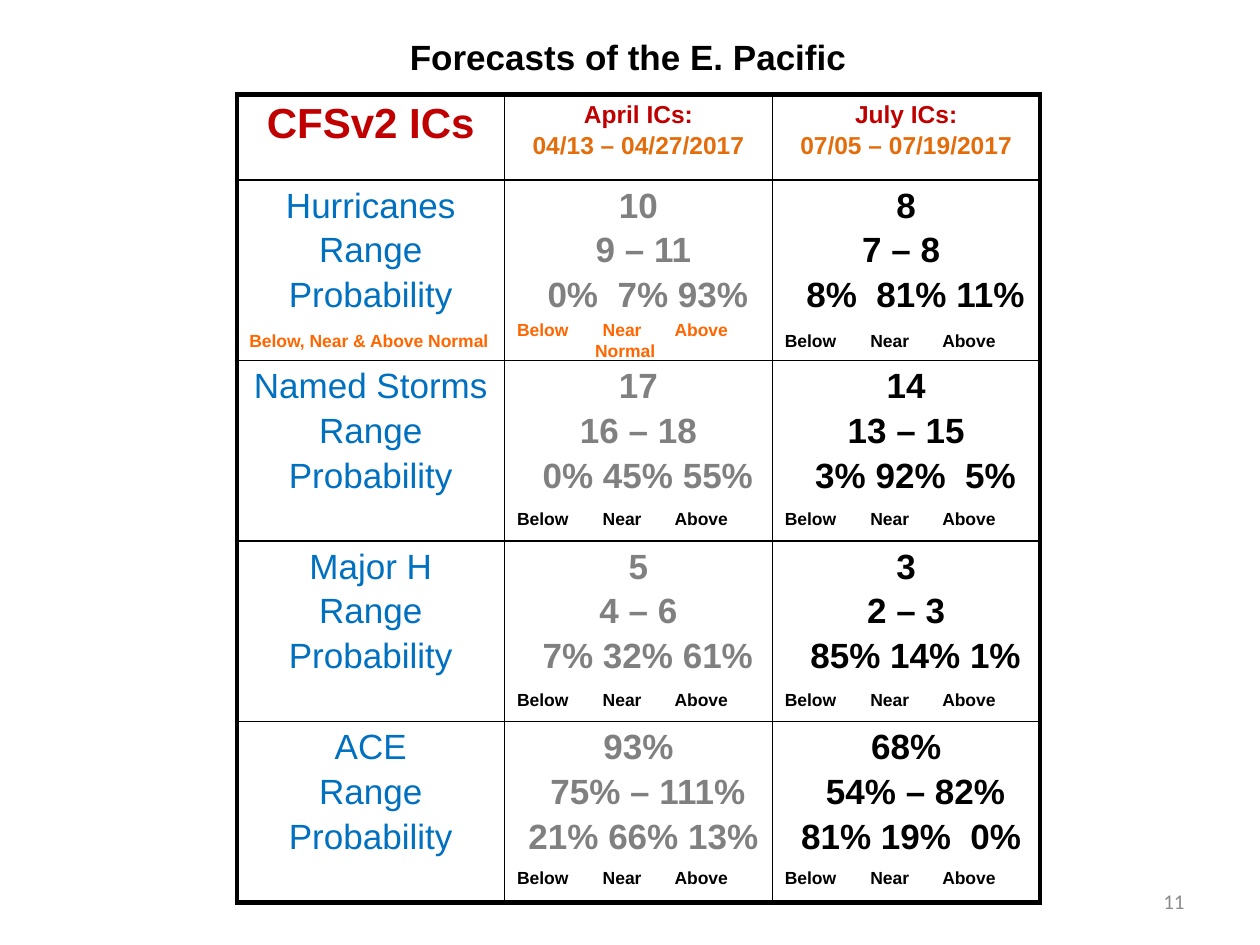
import pptx
import pptx.dml.color
import pptx.enum.text
import pptx.oxml.ns
import pptx.util
import lxml.etree

Inches = pptx.util.Inches
ALIGN = pptx.enum.text.PP_ALIGN
ANCHOR = pptx.enum.text.MSO_ANCHOR

# Grid of the forecast table, in inches
LEFT, TOP = 1.88, 0.75
COLUMN, HEADER_ROW, ROW = 2.125, 0.68, 1.433

RED, ORANGE, BRIGHT_ORANGE = "C00000", "E46C0A", "FF6600"
BLUE, GREY, BLACK = "0070C0", "808080", "000000"

# Measure, April lines, July lines; a line may carry left and right indents
FORECASTS = [
    ("Hurricanes",
     ["10", ("9 – 11", 0.08, 0), ("0%  7% 93%", 0.15, 0)],
     ["8", ("7 – 8", 0, 0.08), ("8%  81% 11%", 0.15, 0)]),
    ("Named Storms",
     ["17", "16 – 18", ("0% 45% 55%", 0.15, 0)],
     ["14", "13 – 15", ("3% 92%  5%", 0.15, 0)]),
    ("Major H",
     ["5", "4 – 6", ("7% 32% 61%", 0.15, 0)],
     ["3", "2 – 3", ("85% 14% 1%", 0.15, 0)]),
    ("ACE",
     ["93%", ("75% – 111%", 0.15, 0), ("21% 66% 13%", 0.08, 0)],
     ["68%", ("54% – 82%", 0.15, 0), ("81% 19%  0%", 0.08, 0)]),
]
LABEL_TOPS = [2.57, 3.98, 5.42, 6.83]
LABELS = "Below\tNear\tAbove"
LABEL_STOPS = [0.68, 1.25]


def rgb(value):
    return pptx.dml.color.RGBColor.from_string(value)


def add_run(paragraph, text, size, color, bold=True, font="Arial"):
    run = paragraph.add_run()
    run.text = text
    run.font.size = pptx.util.Pt(size)
    run.font.name = font
    run.font.bold = bold
    run.font.color.rgb = rgb(color)


def indent(paragraph, left, right=0):
    properties = paragraph._p.get_or_add_pPr()
    properties.set("marL", str(Inches(left)))
    properties.set("marR", str(Inches(right)))


def set_tabs(paragraph, stops):
    tabs = lxml.etree.SubElement(paragraph._p.get_or_add_pPr(),
                                 pptx.oxml.ns.qn("a:tabLst"))
    for stop in stops:
        lxml.etree.SubElement(tabs, pptx.oxml.ns.qn("a:tab"),
                              pos=str(Inches(stop)), algn="l")


def set_border(cell, widths):
    """Draw black cell edges; widths are points by edge tag."""
    properties = cell._tc.get_or_add_tcPr()
    for position, (edge, width) in enumerate(widths.items()):
        line = lxml.etree.Element(pptx.oxml.ns.qn("a:" + edge),
                                  w=str(pptx.util.Pt(width)))
        fill = lxml.etree.SubElement(line, pptx.oxml.ns.qn("a:solidFill"))
        lxml.etree.SubElement(fill, pptx.oxml.ns.qn("a:srgbClr"), val=BLACK)
        properties.insert(position, line)


def fill_cell(cell, lines, size, colors, bold=True):
    """Write centred lines; the last colour serves all further lines."""
    frame = cell.text_frame
    for number, line in enumerate(lines):
        text, left, right = (line, 0, 0) if isinstance(line, str) else line
        paragraph = frame.add_paragraph() if number else frame.paragraphs[0]
        paragraph.alignment = ALIGN.CENTER
        if number:
            paragraph.space_before = pptx.util.Pt(round(size * 0.165, 1))
        indent(paragraph, left, right)
        add_run(paragraph, text, size, colors[min(number, len(colors) - 1)], bold)


def add_forecast_table(slide):
    rows, columns = len(FORECASTS) + 1, 3
    frame = slide.shapes.add_table(
        rows, columns, Inches(LEFT), Inches(TOP), Inches(COLUMN * columns),
        Inches(HEADER_ROW + ROW * len(FORECASTS)))
    table = frame.table
    table.first_row = table.horz_banding = False
    for column in table.columns:
        column.width = Inches(COLUMN)
    for number, row in enumerate(table.rows):
        row.height = Inches(ROW if number else HEADER_ROW)

    # Header
    fill_cell(table.cell(0, 0), ["CFSv2 ICs"], 24, [RED])
    fill_cell(table.cell(0, 1), ["April ICs:", "04/13 – 04/27/2017"], 14, [RED, ORANGE])
    fill_cell(table.cell(0, 2), ["July ICs:", "07/05 – 07/19/2017"], 14, [RED, ORANGE])

    # Forecast rows
    for number, (measure, april, july) in enumerate(FORECASTS, 1):
        fill_cell(table.cell(number, 0), [measure, "Range", "Probability"],
                  20, [BLUE], bold=False)
        fill_cell(table.cell(number, 1), april, 20, [GREY])
        fill_cell(table.cell(number, 2), july, 20, [BLACK])

    # Thick frame, thin inner lines
    for r in range(rows):
        for c in range(columns):
            cell = table.cell(r, c)
            cell.fill.background()
            set_border(cell, {"lnL": 3 if c == 0 else 1,
                              "lnR": 3 if c == columns - 1 else 1,
                              "lnT": 3 if r == 0 else 1,
                              "lnB": 3 if r == rows - 1 else 1})


def add_text(slide, left, top, width, height, text, size=10, color=BLACK,
             bold=True, font="Arial"):
    box = slide.shapes.add_textbox(Inches(left), Inches(top),
                                   Inches(width), Inches(height))
    box.text_frame.word_wrap = True
    add_run(box.text_frame.paragraphs[0], text, size, color, bold, font)
    return box.text_frame


def add_probability_labels(slide):
    for row, top in enumerate(LABEL_TOPS):
        for column in (1, 2):
            left = LEFT + COLUMN * column
            highlighted = row == 0 and column == 1
            if highlighted:
                frame = add_text(slide, left, 2.48, 1.91, 0.43, LABELS,
                                 color=BRIGHT_ORANGE)
                normal = frame.add_paragraph()
                indent(normal, 0.62)
                add_run(normal, "Normal", 10, BRIGHT_ORANGE)
            else:
                frame = add_text(slide, left, top, 1.88, 0.27, LABELS)
            set_tabs(frame.paragraphs[0], LABEL_STOPS)
    legend = add_text(slide, LEFT, LABEL_TOPS[0], 2.11, 0.27,
                      "Below, Near & Above Normal", color=BRIGHT_ORANGE)
    legend.word_wrap = False


def set_title(slide, text):
    title = slide.shapes.title
    title.left, title.top = Inches(3.14), Inches(0.23)
    title.width, title.height = Inches(3.69), Inches(0.44)
    frame = title.text_frame
    frame.word_wrap = False
    frame.vertical_anchor = ANCHOR.TOP
    frame.paragraphs[0].alignment = ALIGN.CENTER
    add_run(frame.paragraphs[0], text, 20, BLACK)


def main():
    deck = pptx.Presentation()
    deck.slide_width, deck.slide_height = Inches(10), Inches(7.5)
    slide = deck.slides.add_slide(deck.slide_layouts[5])
    set_title(slide, "Forecasts of the E. Pacific")
    add_forecast_table(slide)
    add_probability_labels(slide)

    # Page number
    page = add_text(slide, 7.17, 6.95, 2.33, 0.4, "11", 12, "8C8C8C",
                    bold=False, font="Calibri")
    page.vertical_anchor = ANCHOR.MIDDLE
    page.paragraphs[0].alignment = ALIGN.RIGHT

    deck.save("out.pptx")


if __name__ == "__main__":
    main()
